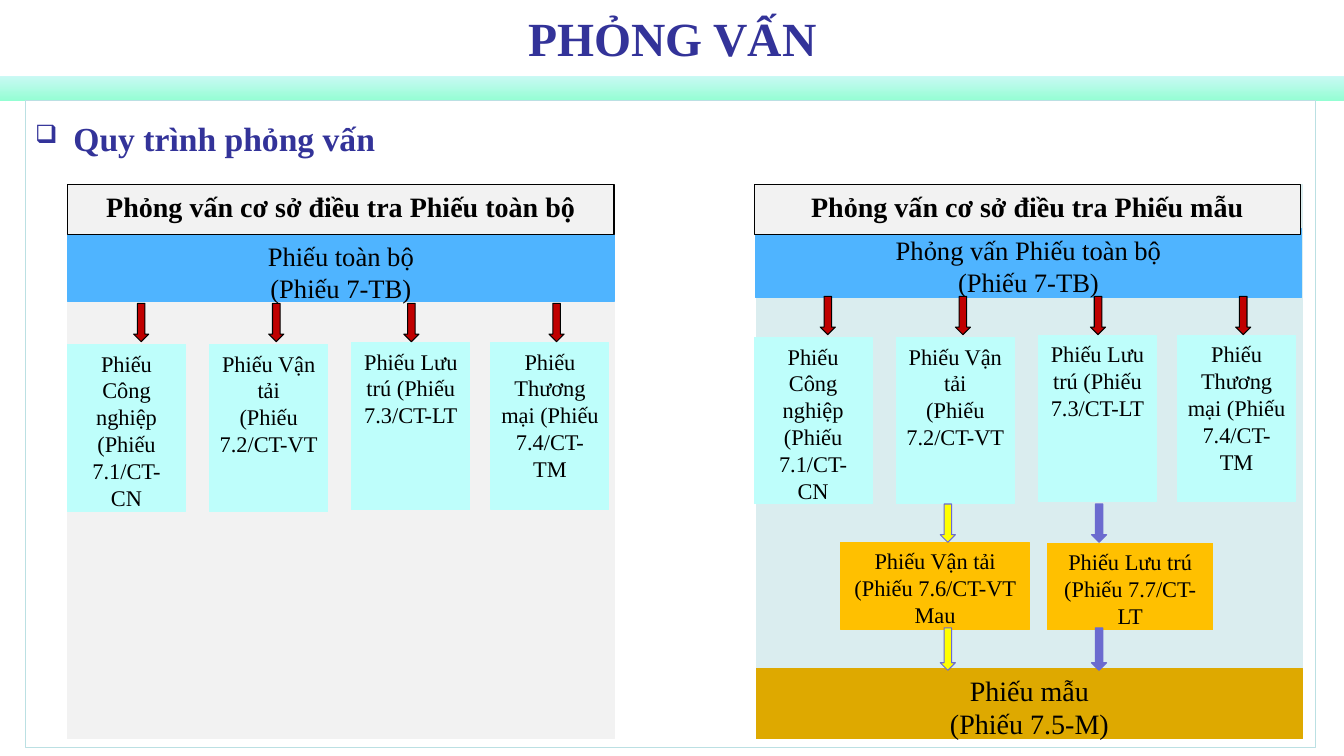
from lxml import etree
from pptx import Presentation
from pptx.dml.color import RGBColor
from pptx.enum.shapes import MSO_SHAPE as SHAPE
from pptx.enum.text import MSO_ANCHOR as ANCHOR, PP_ALIGN as ALIGN
from pptx.oxml.ns import qn
from pptx.util import Inches, Pt

COLORS = {
    "navy": "333399", "black": "000000", "grey": "F2F2F2", "pale": "DAEDEF",
    "blue": "4FB4FF", "cyan": "BEFEFB", "red": "C00000", "yellow": "FFFF00",
    "violet": "6B6BCF", "orange": "FFC000", "gold": "DEA900", "frame": "BBE0E3",
    "mint_top": "CBF9F5", "mint_bottom": "94FED3",
}
FONT = "Times New Roman"
PANEL_W, PANEL_BOTTOM = 5.42, 7.33
# Form text, offset from the panel's left, drop, and offset of its arrow
FORMS = [
    ("Phiếu Công nghiệp\n(Phiếu 7.1/CT-CN", 0, 0.02, 0.73),
    ("Phiếu Vận tải\n(Phiếu 7.2/CT-VT", 1.41, 0.02, 2.07),
    ("Phiếu Lưu trú (Phiếu 7.3/CT-LT", 2.82, 0, 3.41),
    ("Phiếu Thương mại (Phiếu 7.4/CT-TM", 4.2, 0, 4.85),
]


def rgb(name):
    return RGBColor.from_string(COLORS[name])


def write(tf, text, size, color="black", bold=False, align=ALIGN.CENTER):
    tf.word_wrap = True
    for i, line in enumerate(text.split("\n")):
        p = tf.paragraphs[0] if i == 0 else tf.add_paragraph()
        p.alignment = align
        r = p.add_run()
        r.text = line
        for key, value in {"name": FONT, "size": Pt(size), "bold": bold}.items():
            setattr(r.font, key, value)
        r.font.color.rgb = rgb(color)


def add_block(slide, box, fill, line=None, kind=SHAPE.RECTANGLE):
    sp = slide.shapes.add_shape(kind, *map(Inches, box))
    sp.shadow.inherit = False
    if fill:
        sp.fill.solid()
        sp.fill.fore_color.rgb = rgb(fill)
    else:
        sp.fill.background()
    sp.line.color.rgb = rgb(line or fill)
    sp.line.width = Pt(0.75)
    return sp


def add_label(slide, box, text, size, fill, line=None, bold=False):
    sp = add_block(slide, box, fill, line)
    sp.text_frame.vertical_anchor = ANCHOR.TOP
    write(sp.text_frame, text, size, bold=bold)


def add_down_arrow(slide, center_x, top, fill, line, length=0.38):
    """A right arrow turned to point down from the given top."""
    width = 0.15
    box = (center_x - length / 2, top + (length - width) / 2, length, width)
    add_block(slide, box, fill, line, SHAPE.RIGHT_ARROW).rotation = 90


def add_heading(slide, box):
    x, y, w, h = box
    # Gradient band
    band = add_block(slide, (x, y + 0.75, w, 0.25), "mint_top")
    band.line.fill.background()
    band.fill.gradient()
    band.fill.gradient_angle = 270
    for stop, name in zip(band.fill.gradient_stops, ("mint_top", "mint_bottom")):
        stop.color.rgb = rgb(name)
    # Title
    title = slide.shapes.title
    places = {"left": x + 1.67, "top": y, "width": 10, "height": 0.74}
    for key, value in places.items():
        setattr(title, key, Inches(value))
    title.text_frame.vertical_anchor = ANCHOR.MIDDLE
    write(title.text_frame, "PHỎNG VẤN", 34, "navy", True)


def add_body(slide, box):
    tf = add_block(slide, box, None, "frame").text_frame
    tf.vertical_anchor = ANCHOR.TOP
    write(tf, "Quy trình phỏng vấn", 24, "navy", True, ALIGN.LEFT)
    p = tf.paragraphs[0]
    for key, value in {"line_spacing": 1.3, "space_before": Pt(1.2),
                       "space_after": Pt(1.2)}.items():
        setattr(p, key, value)
    # Bullet
    pPr = p._p.get_or_add_pPr()
    pPr.set("marL", str(Inches(0.38)))
    pPr.set("indent", str(-Inches(0.38)))
    color = etree.SubElement(pPr, qn("a:buClr"))
    etree.SubElement(color, qn("a:srgbClr"), val=COLORS["navy"])
    etree.SubElement(pPr, qn("a:buSzPct"), val="75000")
    etree.SubElement(pPr, qn("a:buChar"), char="❑")


def add_forms(slide, x, y, height):
    for text, dx, drop, arrow_dx in FORMS:
        add_label(slide, (x + dx, y + drop, 1.17, height), text, 16, "cyan")
        add_down_arrow(slide, x + arrow_dx, y - 0.39, "red", "black")


def add_panel(slide, x, y, fill):
    add_block(slide, (x, y, PANEL_W, PANEL_BOTTOM - y), fill)


def add_full_survey(slide, x, y):
    add_panel(slide, x, y, "grey")
    add_label(slide, (x, y + 0.5, PANEL_W, 0.66),
              "Phiếu toàn bộ\n(Phiếu 7-TB)", 19, "blue")
    add_forms(slide, x, y + 1.57, 1.66)
    add_label(slide, (x, y, PANEL_W, 0.5),
              "Phỏng vấn cơ sở điều tra Phiếu toàn bộ", 20, "grey", "black", True)


def add_sample_survey(slide, x, y):
    add_panel(slide, x + 0.02, y, "pale")
    add_label(slide, (x + 0.01, y + 0.44, PANEL_W, 0.68),
              "Phỏng vấn Phiếu toàn bộ\n(Phiếu 7-TB)", 19, "blue")
    add_forms(slide, x, y + 1.5, 1.65)
    # Sample forms, then the final form
    add_label(slide, (x + 0.86, y + 3.55, 1.87, 0.87),
              "Phiếu Vận tải\n(Phiếu 7.6/CT-VT Mau", 16, "orange")
    add_label(slide, (x + 2.91, y + 3.56, 1.64, 0.86),
              "Phiếu Lưu trú (Phiếu 7.7/CT-LT", 16, "orange")
    add_label(slide, (x + 0.02, y + 4.8, PANEL_W, 0.7),
              "Phiếu mẫu\n(Phiếu 7.5-M)", 20, "gold")
    for dx, fill in ((1.92, "yellow"), (3.42, "violet")):
        add_down_arrow(slide, x + dx, y + 3.17, fill, "violet")
        add_down_arrow(slide, x + dx, y + 4.4, fill, "violet", 0.42)
    add_label(slide, (x, y, PANEL_W, 0.5),
              "Phỏng vấn cơ sở điều tra Phiếu mẫu", 20, "grey", "black", True)


def main():
    prs = Presentation()
    prs.slide_width, prs.slide_height = Inches(13.33), Inches(7.5)
    slide = prs.slides.add_slide(prs.slide_layouts[5])
    add_heading(slide, (0, 0, 13.33, 1))
    add_body(slide, (0.25, 1, 12.8, 6.42))
    add_full_survey(slide, 0.67, 1.83)
    add_sample_survey(slide, 7.48, 1.83)
    prs.save("out.pptx")


if __name__ == "__main__":
    main()
